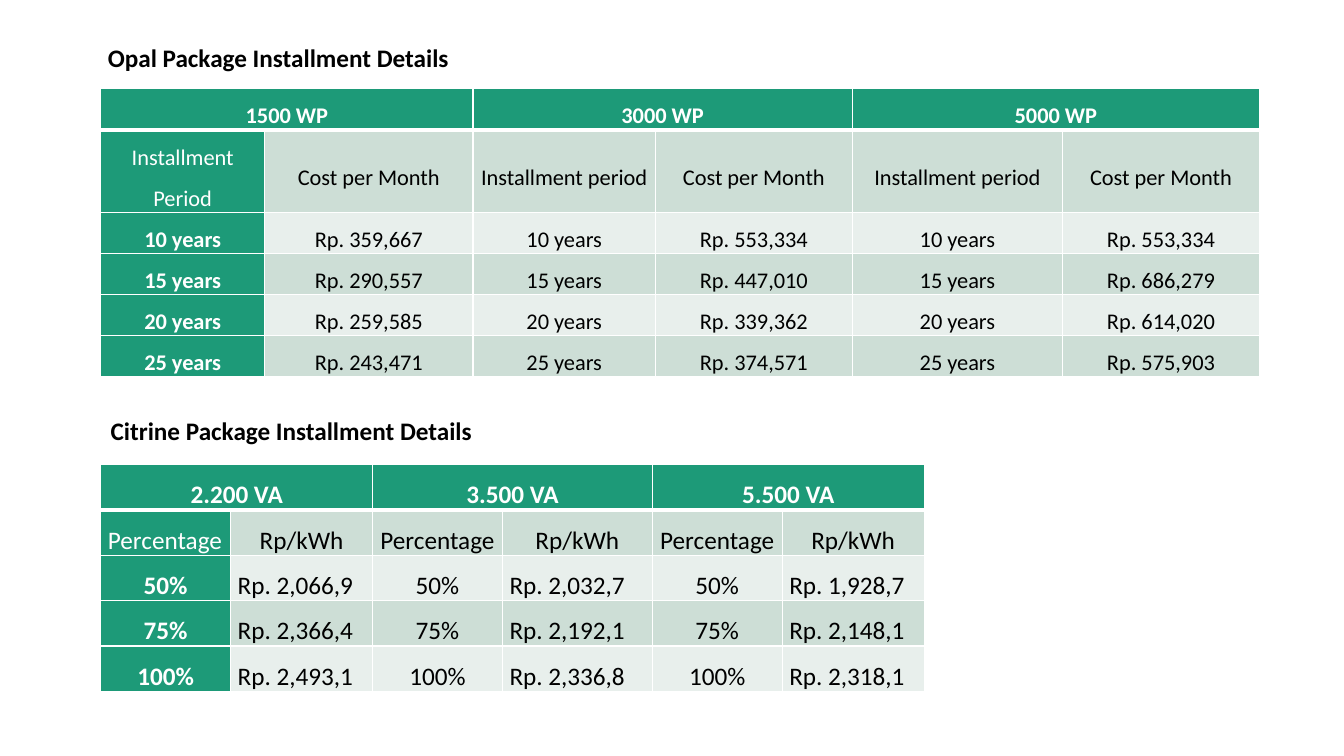
from dataclasses import dataclass

from lxml import etree
from pptx import Presentation
from pptx.dml.color import RGBColor
from pptx.enum import text as t
from pptx.oxml import ns
from pptx.util import Cm, Pt


@dataclass(frozen=True)
class Theme:
    font: str = "Calibri"
    green: str = "1D9A78"
    band_dark: str = "CDDED6"
    band_light: str = "E8EFEC"
    white: str = "FFFFFF"
    black: str = "000000"
    title_size: int = 18
    opal_size: int = 16
    citrine_size: int = 18


THEME = Theme()
CENTER, JUSTIFY, LEFT = t.PP_ALIGN.CENTER, t.PP_ALIGN.JUSTIFY, t.PP_ALIGN.LEFT
TOP, MIDDLE = t.MSO_ANCHOR.TOP, t.MSO_ANCHOR.MIDDLE

OPAL = [
    ["1500 WP", "", "3000 WP", "", "5000 WP", ""],
    ["Installment Period", "Cost per Month"] + ["Installment period", "Cost per Month"] * 2,
    ["10 years", "Rp. 359,667", "10 years", "Rp. 553,334", "10 years", "Rp. 553,334"],
    ["15 years", "Rp. 290,557", "15 years", "Rp. 447,010", "15 years", "Rp. 686,279"],
    ["20 years", "Rp. 259,585", "20 years", "Rp. 339,362", "20 years", "Rp. 614,020"],
    ["25 years", "Rp. 243,471", "25 years", "Rp. 374,571", "25 years", "Rp. 575,903"],
]
CITRINE = [
    ["2.200 VA", "", "3.500 VA", "", "5.500 VA", ""],
    ["Percentage", "Rp/kWh"] * 3,
    ["50%", "Rp. 2,066,9", "50%", "Rp. 2,032,7", "50%", "Rp. 1,928,7"],
    ["75%", "Rp. 2,366,4", "75%", "Rp. 2,192,1", "75%", "Rp. 2,148,1"],
    ["100%", "Rp. 2,493,1", "100%", "Rp. 2,336,8", "100%", "Rp. 2,318,1"],
]


def set_attrs(obj, values):
    for name, value in values.items():
        setattr(obj, name, value)


def write(tf, words, size, color, bold, align, spacing=None):
    p = tf.paragraphs[0]
    set_attrs(p, {"alignment": align, "line_spacing": spacing})
    r = p.add_run()
    r.text = words
    set_attrs(r.font, {"name": THEME.font, "size": Pt(size), "bold": bold})
    r.font.color.rgb = RGBColor.from_string(color)


def add_title(s, words, left, top, width, align):
    tf = s.shapes.add_textbox(Cm(left), Cm(top), Cm(width), Cm(1.02)).text_frame
    set_attrs(tf, {"word_wrap": True, "auto_size": t.MSO_AUTO_SIZE.SHAPE_TO_FIT_TEXT})
    write(tf, words, THEME.title_size, THEME.black, True, align)


def add_borders(cell, widths):
    tc_pr = cell._tc.get_or_add_tcPr()
    for side, width in widths.items():
        ln = etree.SubElement(tc_pr, ns.qn(f"a:ln{side}"), w=str(Pt(width)))
        fill = etree.SubElement(ln, ns.qn("a:solidFill"))
        etree.SubElement(fill, ns.qn("a:srgbClr"), val=THEME.white)


def style_cell(cell, row, col):
    # A thick rule separates the header from the body
    widths = {"L": 1, "R": 1, "T": 1, "B": 3 if row == 0 else 1}
    if row == 1:
        del widths["T"]
    add_borders(cell, widths)
    band = THEME.band_dark if row % 2 else THEME.band_light
    cell.fill.solid()
    cell.fill.fore_color.rgb = RGBColor.from_string(
        THEME.green if row == 0 or col == 0 else band)
    set_attrs(cell, {"margin_left": Cm(0.18), "margin_right": Cm(0.18),
                     "margin_top": 0, "margin_bottom": 0})


def add_price_table(s, rows, top, col_widths, row_heights, size, align_of, anchor_of):
    frame = s.shapes.add_table(len(rows), len(col_widths), Cm(2.54), Cm(top),
                               Cm(sum(col_widths)), Cm(sum(row_heights)))
    table = frame.table
    table.first_col = True
    for column, width in zip(table.columns, col_widths):
        column.width = Cm(width)
    for line, height in zip(table.rows, row_heights):
        line.height = Cm(height)
    for i, values in enumerate(rows):
        for j, words in enumerate(values):
            cell = table.cell(i, j)
            style_cell(cell, i, j)
            cell.vertical_anchor = anchor_of(i, j)
            if words:
                on_green = i == 0 or j == 0
                write(cell.text_frame, words, size,
                      THEME.white if on_green else THEME.black,
                      on_green and i != 1, align_of(i, j), 1.5)
    for j in range(0, len(col_widths), 2):
        table.cell(0, j).merge(table.cell(0, j + 1))


def citrine_align(row, col):
    justified = (row, col) == (1, 0) or (row > 1 and col % 2)
    return JUSTIFY if justified else CENTER


def main():
    prs = Presentation()
    set_attrs(prs, {"slide_width": Cm(33.87), "slide_height": Cm(19.05)})
    s = prs.slides.add_slide(prs.slide_layouts[6])

    # Opal package
    add_price_table(s, OPAL, 2.24, [4.13, 5.25, 4.6, 4.96, 5.3, 4.96],
                    [1.03, 2.06] + [1.03] * 4, THEME.opal_size,
                    lambda row, col: CENTER,
                    lambda row, col: MIDDLE if row < 2 else TOP)
    add_title(s, "Opal Package Installment Details", 2.34, 0.94, 9.35, CENTER)

    # Citrine package
    add_price_table(s, CITRINE, 11.7, [3.27, 3.58, 3.27, 3.78, 3.27, 3.58],
                    [1.14] * 5, THEME.citrine_size, citrine_align,
                    lambda row, col: MIDDLE if row == 1 and col else TOP)
    add_title(s, "Citrine Package Installment Details", 2.54, 10.34, 10.82, LEFT)

    prs.save("out.pptx")


if __name__ == "__main__":
    main()
